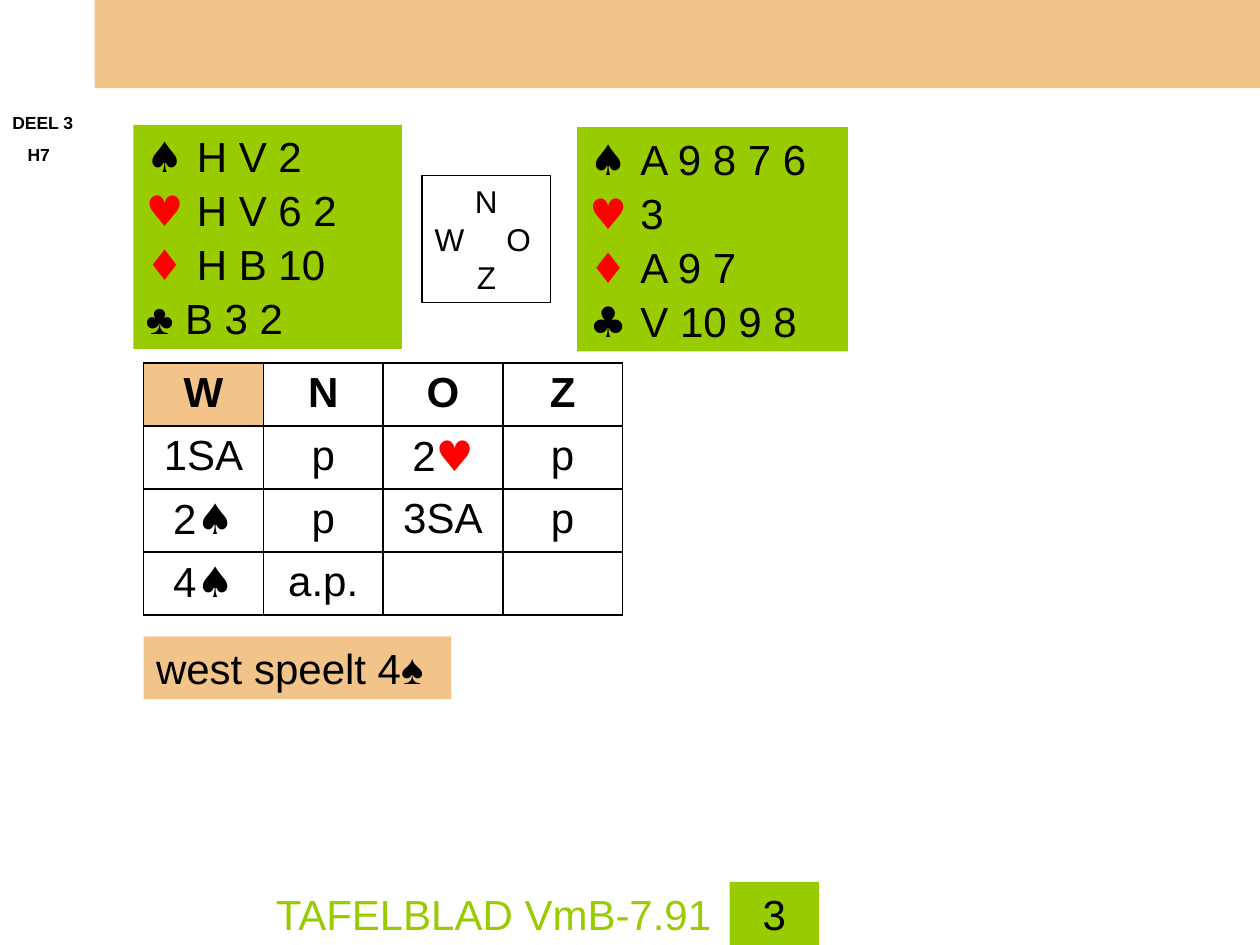
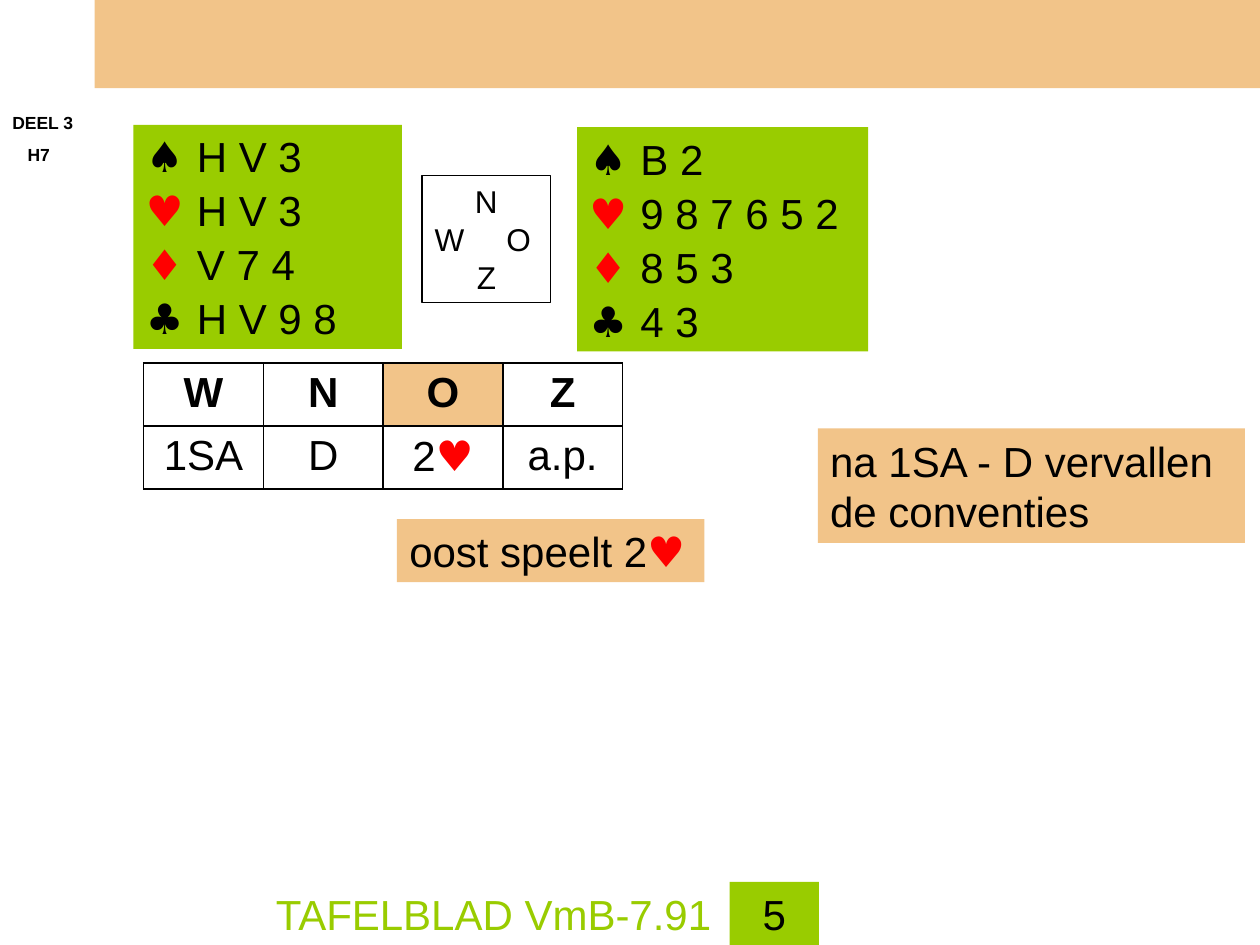
from lxml.etree import SubElement
from pptx import Presentation
from pptx.dml.color import RGBColor
from pptx.enum.shapes import MSO_SHAPE
from pptx.enum.text import MSO_ANCHOR, PP_ALIGN
from pptx.oxml.ns import qn
from pptx.util import Inches, Pt

BLACK, RED, GREEN, SAND = "000000", "FF0000", "99CC00", "F2C489"
TEXT_FONT, SYMBOL_FONT = "Arial", "DejaVu Sans"
SUIT_COLORS = {"♠": BLACK, "♥": RED, "♦": RED, "♣": BLACK}
SEATS = ("W", "N", "O", "Z")
COLUMN_WIDTH, ROW_HEIGHT = 0.95, 0.5

BOARDS = [
    {
        "number": "3",
        "west": [("♠ ", "H V 2"), ("♥ ", "H V 6 2"), ("♦ ", "H B 10"), ("♣ B 3 2",)],
        "east": [("♠ ", "A 9 8 7 6"), ("♥ ", "3"), ("♦ ", "A 9 7"), ("♣ ", "V 10 9 8")],
        "east_width": 2.15,
        "dealer": "W",
        "calls": [
            [("1SA",), ("p",), ("2", "♥"), ("p",)],
            [("2", "♠"), ("p",), ("3SA",), ("p",)],
            [("4", "♠"), ("a.p.",), (), ()],
        ],
        "notes": [((1.14, 5.05, 2.44, 0.5), [("west speelt 4♠",)])],
    },
    {
        "number": "5",
        "west": [("♠ ", "H V 3"), ("♥ ", "H V 3"), ("♦ ", "V 7 4"), ("♣ ", "H V 9 8")],
        "east": [("♠ ", "B 2"), ("♥ ", "9 8 7 6 5 2"), ("♦ ", "8 5 3"), ("♣ ", "4 3")],
        "east_width": 2.31,
        "dealer": "O",
        "calls": [[("1SA",), ("D",), ("2", "♥"), ("a.p.",)]],
        "notes": [
            ((3.15, 4.12, 2.44, 0.5), [("oost speelt 2", "♥")]),
            ((6.49, 3.4, 3.39, 0.91), [("na 1SA - D vervallen",), ("de conventies",)]),
        ],
    },
]


def rgb(value):
    return RGBColor.from_string(value)


def add_span(para, text, size, color, bold):
    span = para.add_run()
    span.text = text
    suit = text.strip()
    font = span.font
    font.size = Pt(size)
    font.bold = bold
    font.color.rgb = rgb(SUIT_COLORS.get(suit, color))
    font.name = SYMBOL_FONT if suit in SUIT_COLORS else TEXT_FONT
    SubElement(font._element, qn("a:ea"), typeface=font.name)


def write_lines(frame, lines, size=24, color=BLACK, bold=False, align=PP_ALIGN.LEFT, gap=0):
    for index, spans in enumerate(lines):
        para = frame.add_paragraph() if index else frame.paragraphs[0]
        para.alignment = align
        if index and gap:
            para.space_before = Pt(gap)
        for text in spans:
            add_span(para, text, size, color, bold)


def add_box(page, place, fill=None, line=None):
    box = page.shapes.add_shape(MSO_SHAPE.RECTANGLE, *map(Inches, place))
    box.shadow.inherit = False
    if fill:
        box.fill.solid()
        box.fill.fore_color.rgb = rgb(fill)
    else:
        box.fill.background()
    if line:
        box.line.color.rgb = rgb(line)
        box.line.width = Pt(0.75)
    else:
        box.line.fill.background()
    box.text_frame.word_wrap = True
    box.text_frame.vertical_anchor = MSO_ANCHOR.MIDDLE
    return box


def add_label(page, place, lines, **style):
    box = page.shapes.add_textbox(*map(Inches, place))
    box.text_frame.word_wrap = True
    write_lines(box.text_frame, lines, **style)
    return box


def add_frame(page, number):
    add_box(page, (0.75, 0, 9.25, 0.7), SAND)
    chapter = add_label(page, (0, 0.84, 0.75, 0.52), [("DEEL 3",), ("H7",)],
                        size=10, bold=True, gap=6.2)
    indent = chapter.text_frame.paragraphs[1]._p.get_or_add_pPr()
    indent.set("marL", str(Inches(0.12)))
    add_label(page, (2.09, 7, 7.09, 0.5), [("TAFELBLAD VmB-7.91",)], color=GREEN)
    badge = add_box(page, (5.79, 7, 0.71, 0.5), GREEN)
    write_lines(badge.text_frame, [(number,)], align=PP_ALIGN.CENTER)


def add_hand(page, place, suits):
    box = add_box(page, place, GREEN)
    write_lines(box.text_frame, suits, gap=2)


def add_compass(page, place):
    box = add_box(page, place, line=BLACK)
    write_lines(box.text_frame, [("N",), ("W\tO",), ("Z",)], size=18, align=PP_ALIGN.CENTER)
    middle = box.text_frame.paragraphs[1]
    middle.alignment = PP_ALIGN.LEFT
    tabs = SubElement(middle._p.get_or_add_pPr(), qn("a:tabLst"))
    SubElement(tabs, qn("a:tab"), pos=str(Inches(0.57)), algn="l")


def set_borders(cell):
    properties = cell._tc.get_or_add_tcPr()
    for position, side in enumerate(("a:lnL", "a:lnR", "a:lnT", "a:lnB")):
        line = properties.makeelement(qn(side), {"w": str(Pt(1))})
        fill = SubElement(line, qn("a:solidFill"))
        SubElement(fill, qn("a:srgbClr"), val=BLACK)
        properties.insert(position, line)


def add_bidding(page, left, top, dealer, calls):
    rows = [[(seat,) for seat in SEATS]] + calls
    place = (left, top, COLUMN_WIDTH * len(SEATS), ROW_HEIGHT * len(rows))
    table = page.shapes.add_table(len(rows), len(SEATS), *map(Inches, place)).table
    table.first_row = table.horz_banding = False
    for row_index, row in enumerate(rows):
        for column_index, spans in enumerate(row):
            cell = table.cell(row_index, column_index)
            if spans == (dealer,):
                cell.fill.solid()
                cell.fill.fore_color.rgb = rgb(SAND)
            else:
                cell.fill.background()
            set_borders(cell)
            write_lines(cell.text_frame, [spans], bold=row_index == 0, align=PP_ALIGN.CENTER)


def add_note(page, place, lines):
    box = add_box(page, place, SAND)
    write_lines(box.text_frame, lines)


def add_board(deck, board):
    page = deck.slides.add_slide(deck.slide_layouts[6])
    add_frame(page, board["number"])
    add_hand(page, (1.06, 0.99, 2.13, 1.78), board["west"])
    add_hand(page, (4.58, 1.01, board["east_width"], 1.78), board["east"])
    add_bidding(page, 1.14, 2.88, board["dealer"], board["calls"])
    for place, lines in board["notes"]:
        add_note(page, place, lines)
    add_compass(page, (3.35, 1.39, 1.02, 1.01))


def main():
    deck = Presentation()
    deck.slide_width, deck.slide_height = Inches(10), Inches(7.5)
    for board in BOARDS:
        add_board(deck, board)
    deck.save("out.pptx")


if __name__ == "__main__":
    main()
